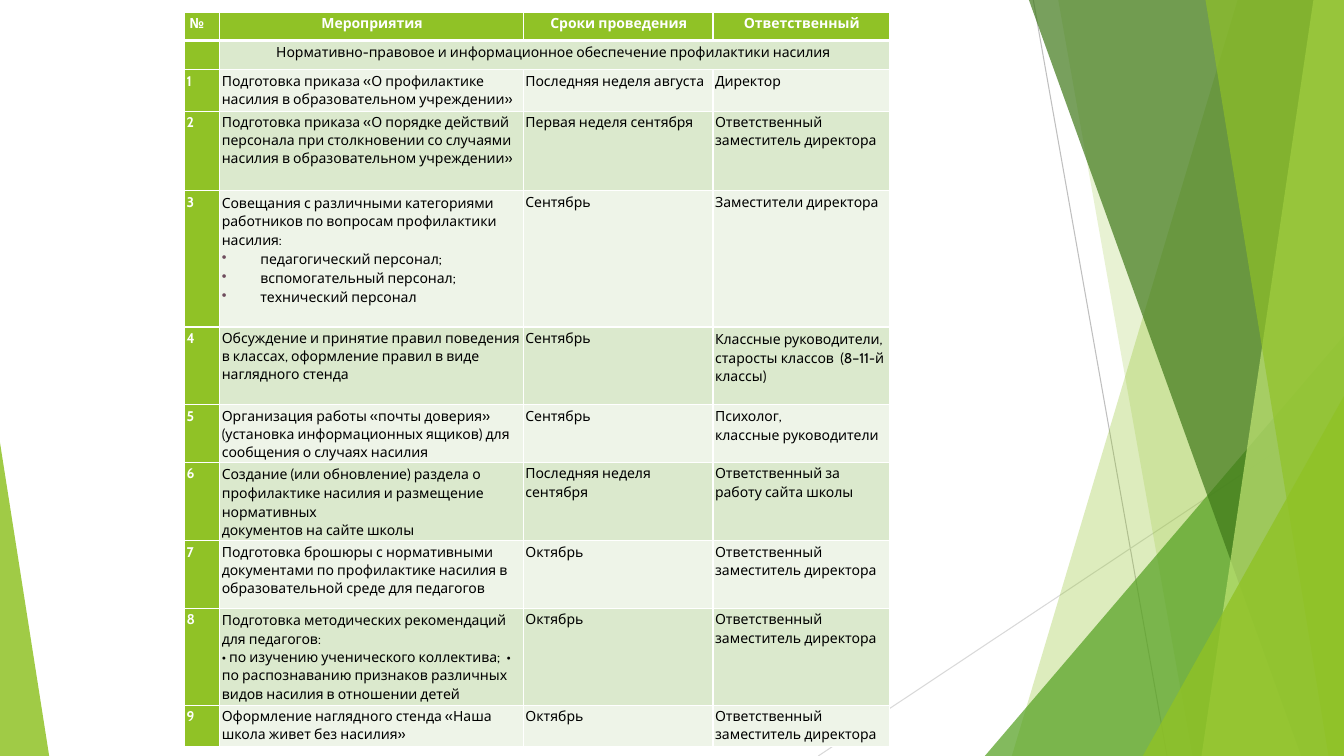
from dataclasses import dataclass

from lxml.etree import SubElement
from pptx import Presentation
from pptx.dml.color import RGBColor
from pptx.enum.shapes import MSO_CONNECTOR, MSO_SHAPE
from pptx.enum.text import PP_ALIGN
from pptx.oxml.ns import qn
from pptx.util import Cm, Pt


@dataclass(frozen=True)
class Theme:
    """Colours, font and sizes of the slide."""
    font: str = "Cabin"
    size: float = 10
    white: str = "FFFFFF"
    text: str = "000000"
    bullet: str = "6E4C5D"
    lime: str = "90C226"
    green: str = "54A021"
    forest: str = "3F7819"
    pale: str = "C0E474"
    band_dark: str = "DBE9CD"
    band_light: str = "EEF4E8"
    steep_line: str = "BFBFBF"
    flat_line: str = "D9D9D9"


@dataclass(frozen=True)
class Para:
    """A paragraph of a table cell; lengths in cm, spacing in points."""
    text: str
    spacing: float = 1.07
    after: float = 0
    left: float = 0
    bulleted: bool = False
    align: PP_ALIGN = PP_ALIGN.LEFT


THEME = Theme()
SLIDE_W, SLIDE_H = 33.87, 19.05
COLUMN_WIDTHS = (0.89, 7.65, 4.78, 4.45)
ROW_HEIGHTS = (0.71, 0.74, 1.04, 2.01, 3.43, 1.96, 1.45, 1.98, 1.7, 2.44, 1.04)
HEADINGS = ("Мероприятия", "Сроки проведения", "Ответственный")
SECTION = "Нормативно-правовое и информационное обеспечение профилактики насилия"
DEPUTY = "Ответственный заместитель директора"
MEASURES = (
    ("Подготовка приказа «О профилактике насилия в образовательном учреждении»",
     "Последняя неделя августа", "Директор"),
    ("Подготовка приказа «О порядке действий персонала при столкновении со "
     "случаями насилия в образовательном учреждении»",
     "Первая неделя сентября", DEPUTY),
    ((Para("Совещания с различными категориями работников по вопросам "
           "профилактики насилия:", 1.11, 0.1),
      Para("педагогический персонал;", after=0.6, left=0.97, bulleted=True),
      Para("вспомогательный персонал;", after=0.6, left=0.97, bulleted=True),
      Para("технический персонал", left=0.97, bulleted=True)),
     "Сентябрь", "Заместители директора"),
    ("Обсуждение и принятие правил поведения в классах, оформление правил в "
     "виде наглядного стенда", "Сентябрь",
     (Para("Классные руководители, старосты классов  (8–11-й", 1.11),
      Para("классы)"))),
    ("Организация работы «почты доверия» (установка информационных ящиков) "
     "для сообщения о случаях насилия", "Сентябрь",
     (Para("Психолог,", after=0.5), Para("классные руководители"))),
    ((Para("Создание (или обновление) раздела о профилактике насилия и "
           "размещение нормативных", 1.11),
      Para("документов на сайте школы")),
     "Последняя неделя сентября", "Ответственный за работу сайта школы"),
    ("Подготовка брошюры с нормативными документами по профилактике насилия "
     "в образовательной среде для педагогов", "Октябрь", DEPUTY),
    ((Para("Подготовка методических рекомендаций для педагогов:", 1.11, 0.1),
      Para("• по изучению ученического коллектива;  • по распознаванию "
           "признаков различных видов насилия в отношении детей")),
     "Октябрь", DEPUTY),
    ("Оформление наглядного стенда «Наша школа живет без насилия»",
     "Октябрь", DEPUTY),
)


def paint(shape, color, opacity):
    """Give a shape a translucent fill without outline or shadow."""
    shape.shadow.inherit = False
    shape.line.fill.background()
    shape.fill.solid()
    shape.fill.fore_color.rgb = RGBColor.from_string(color)
    tint = shape.element.spPr.find(qn("a:solidFill"))[0]
    SubElement(tint, qn("a:alpha")).set("val", str(opacity * 1000))


def add_ray(slide, start, end, color):
    """Draw a thin straight line between two points in cm."""
    ray = slide.shapes.add_connector(
        MSO_CONNECTOR.STRAIGHT, *(Cm(v) for v in (*start, *end)))
    ray.line.color.rgb = RGBColor.from_string(color)
    ray.line.width = Pt(0.75)
    SubElement(ray.element.spPr, qn("a:effectLst"))


def add_blade(slide, box, top_x, bottom_x, color, opacity):
    """Draw a slanted panel reaching the right edge of the box."""
    left, top, width, height = box
    right, bottom = left + width, top + height
    builder = slide.shapes.build_freeform(Cm(left + top_x), Cm(top), scale=1.0)
    builder.add_line_segments(
        [(Cm(x), Cm(y)) for x, y in
         ((right, top), (right, bottom), (left + bottom_x, bottom))])
    paint(builder.convert_to_shape(), color, opacity)


def add_wedge(slide, box, apex, color, opacity):
    """Draw a triangle filling the box, with its apex at a share of the width."""
    wedge = slide.shapes.add_shape(
        MSO_SHAPE.ISOSCELES_TRIANGLE, *(Cm(v) for v in box))
    wedge.adjustments[0] = apex
    paint(wedge, color, opacity)


def add_facets(slide, box):
    """Build the green facets at the right of the slide."""
    left, top, width, height = box
    right, bottom = left + width, top + height
    add_ray(slide, (left + 5.42, top), (left + 8.79, bottom), THEME.steep_line)
    add_ray(slide, (right, top + 10.24), (left, bottom), THEME.flat_line)
    add_blade(slide, box, 10.57, 4.88, THEME.lime, 30)
    add_blade(slide, box, 6.05, 9.43, THEME.lime, 20)
    add_wedge(slide, (right - 9.05, bottom - 10.59, 9.05, 10.59), 1, THEME.green, 72)
    add_blade(slide, box, 5.31, 12.17, THEME.forest, 70)
    add_blade(slide, box, 12.48, 9.66, THEME.pale, 70)
    add_blade(slide, box, 9.76, 12.86, THEME.lime, 65)
    add_wedge(slide, (right - 5.07, bottom - 9.07, 5.07, 9.07), 1, THEME.lime, 80)


def write_cell(cell, content, color, bold):
    """Write a string or a tuple of paragraphs into a cell."""
    paras = (Para(content),) if isinstance(content, str) else content
    frame = cell.text_frame
    for index, para in enumerate(paras):
        line = frame.add_paragraph() if index else frame.paragraphs[0]
        line.alignment = para.align
        line.line_spacing = para.spacing
        line.space_after = Pt(para.after)
        props = line._p.get_or_add_pPr()
        props.set("marL", str(Cm(para.left)))
        props.set("indent", str(-Cm(para.left) if para.bulleted else 0))
        if para.bulleted:
            tint = SubElement(props, qn("a:buClr"))
            SubElement(tint, qn("a:srgbClr")).set("val", THEME.bullet)
            SubElement(props, qn("a:buChar")).set("char", "•")
        if not para.text:
            SubElement(line._p, qn("a:endParaRPr")).set("sz", str(THEME.size * 100))
            continue
        run = line.add_run()
        run.text = para.text
        run.font.name, run.font.size, run.font.bold = THEME.font, Pt(THEME.size), bold
        run.font.color.rgb = RGBColor.from_string(color)


def style_cell(cell, fill, top_width, bottom_width):
    """Set the margins, white borders and fill of a cell."""
    cell.margin_left = cell.margin_top = Cm(0.05)
    cell.margin_right, cell.margin_bottom = Cm(0.03), 0
    props = cell._tc.get_or_add_tcPr()
    for side, width in (("L", 1), ("R", 1), ("T", top_width), ("B", bottom_width)):
        border = SubElement(props, qn(f"a:ln{side}"), w=str(Pt(width)))
        solid = SubElement(border, qn("a:solidFill"))
        SubElement(solid, qn("a:srgbClr")).set("val", THEME.white)
    cell.fill.solid()
    cell.fill.fore_color.rgb = RGBColor.from_string(fill)


def add_plan(slide, left, top):
    """Build the table of measures with its corner at the given point."""
    header = ((Para("№", left=0.08),),
              *((Para(text, align=PP_ALIGN.CENTER),) for text in HEADINGS))
    section = ("", (Para(SECTION, left=1.37),), "", "")
    rows = [header, section,
            *((str(n), *measure) for n, measure in enumerate(MEASURES, 1))]
    plan = slide.shapes.add_table(
        len(rows), len(COLUMN_WIDTHS), Cm(left), Cm(top),
        Cm(sum(COLUMN_WIDTHS)), Cm(sum(ROW_HEIGHTS))).table
    for column, width in zip(plan.columns, COLUMN_WIDTHS):
        column.width = Cm(width)
    for r, (row, height) in enumerate(zip(rows, ROW_HEIGHTS)):
        plan.rows[r].height = Cm(height)
        band = THEME.band_dark if r % 2 else THEME.band_light
        for c, content in enumerate(row):
            accent = r == 0 or c == 0
            cell = plan.cell(r, c)
            style_cell(cell, THEME.lime if accent else band,
                       3 if r == 1 else 1, 3 if r == 0 else 1)
            write_cell(cell, content, THEME.white if accent else THEME.text, accent)
    plan.cell(1, 1).merge(plan.cell(1, 3))


def main():
    """Create the slide and save it."""
    deck = Presentation()
    deck.slide_width, deck.slide_height = Cm(SLIDE_W), Cm(SLIDE_H)
    slide = deck.slides.add_slide(deck.slide_layouts[6])
    add_facets(slide, (20.62, 0, SLIDE_W - 20.62, SLIDE_H))
    add_wedge(slide, (0, SLIDE_H - 7.9, 1.24, 7.9), 0, THEME.lime, 85)
    add_plan(slide, 4.65, 0.31)
    deck.save("out.pptx")


if __name__ == "__main__":
    main()
